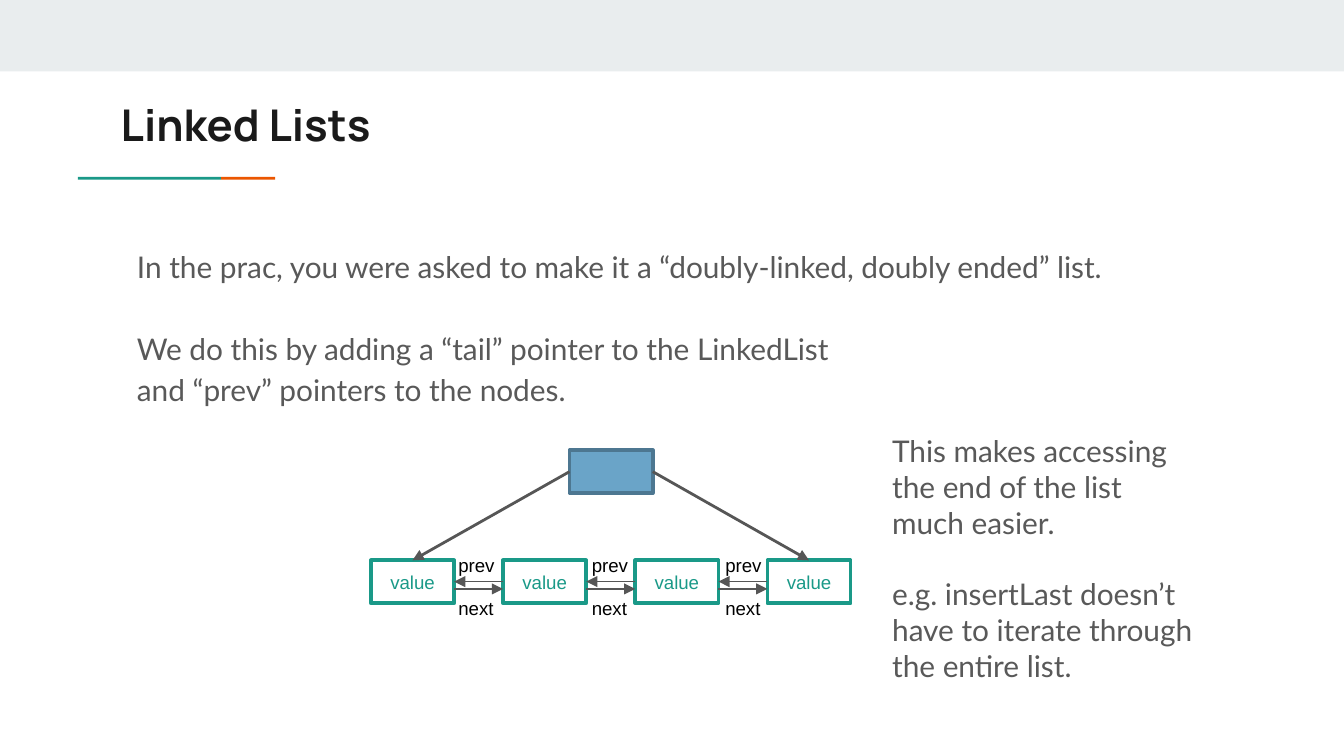
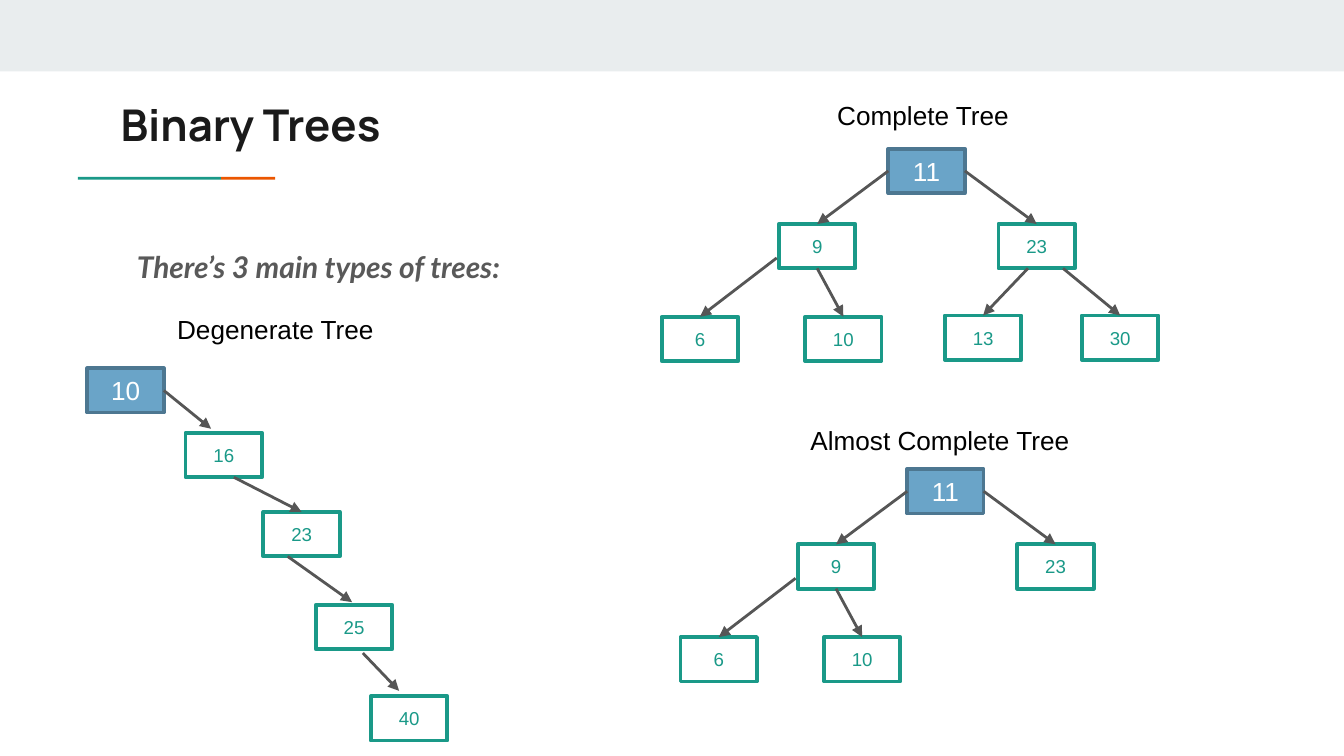
from itertools import pairwise
from typing import NamedTuple, Optional, Union

from pptx import Presentation
from pptx.dml.color import RGBColor
from pptx.enum.shapes import MSO_CONNECTOR, MSO_SHAPE
from pptx.enum.text import MSO_ANCHOR as Anchor, PP_ALIGN as Align
from pptx.oxml.ns import qn
from pptx.shapes.autoshape import Shape
from pptx.shapes.connector import Connector
from pptx.slide import Slide
from pptx.util import Pt
from lxml.etree import SubElement

COLORS = {
    "band": "E9EDEE", "teal": "1A9988", "orange": "EB5600", "title": "1A1A1A",
    "body": "595959", "arrow": "565656", "root": "6AA4C8", "root_edge": "4D7791",
    "white": "FFFFFF", "black": "000000",
}
TOP, LEFT, BOTTOM, RIGHT = range(4)


class Box(NamedTuple):
    left: float
    top: float
    width: float
    height: float


class Style(NamedTuple):
    font: str
    size: float
    color: str
    bold: bool = False
    italic: bool = False


class NodeLook(NamedTuple):
    fill: str
    edge: str
    text: Style


Spot = Union[int, tuple[float, float]]  # a connection site, or an offset from the node's corner


class TreeNode(NamedTuple):
    """A node placed relative to the root, with the arrow that reaches it."""
    label: str
    dx: float = 0
    dy: float = 0
    parent: Optional[int] = None
    start: Spot = BOTTOM
    end: Spot = TOP


class Tree(NamedTuple):
    heading: str
    heading_box: Box
    root_left: float
    root_top: float
    nodes: list[TreeNode]


TITLE = Style("Manrope", 23.4, "title", bold=True)
BODY = Style("Lato", 16, "body")
LEAD = BODY._replace(bold=True, italic=True)
HEADING = Style("Arial", 14, "black")
LABEL = Style("Arial", 10, "black")
ROOT = NodeLook("root", "root_edge", Style("Arial", 14, "white"))
CHILD = NodeLook("white", "teal", Style("Arial", 10, "teal"))

BAND = Box(0, 0, 720, 38.3)
RULES = [("teal", Box(41.8, 94.8, 76.6, 1.5)), ("orange", Box(118.4, 94.8, 29, 1.5))]
BODY_BOX = Box(57.6, 123.1, 605.5, 219)

LIST_LEFT, LIST_TOP, LIST_PITCH, LIST_COUNT = 198.7, 300.2, 70.8, 4
LIST_NODE_W, LIST_NODE_H = 44.6, 23
LABEL_PITCH = 71.5
TREE_NODE_W, TREE_NODE_H = 41, 23.8

ALMOST_COMPLETE = [
    TreeNode("11"),
    TreeNode("9", -58.6, 40.3, 0, LEFT),
    TreeNode("23", 59, 40.3, 0, RIGHT),
    TreeNode("6", -121.4, 90, 1, (-1.2, 18.2)),
    TreeNode("10", -44.6, 90, 1),
]
COMPLETE = ALMOST_COMPLETE + [
    TreeNode("13", 30.3, 89.3, 2, (15.8, 23.8)),
    TreeNode("30", 103.7, 89.3, 2, (34.6, 23.8)),
]
DEGENERATE = [
    TreeNode("10"),
    TreeNode("16", 52.6, 34.6, 0, RIGHT, (13.7, -2.2)),
    TreeNode("23", 94.3, 77, 1, (25.9, 23.8)),
    TreeNode("25", 122.4, 126.7, 2, (13, 23.8), (19.4, -1.4)),
    TreeNode("40", 151.9, 175.7, 3, (25.2, 25.9), (15.1, -2.9)),
]
TREES = [
    Tree("Complete Tree", Box(441.4, 49.7, 108, 24.5), 475.9, 79.7, COMPLETE),
    Tree("Degenerate Tree", Box(87.8, 164.2, 121, 24.5), 46.8, 197.3, DEGENERATE),
    Tree("Almost Complete Tree", Box(427, 223.9, 154.8, 24.5), 486, 251.3, ALMOST_COMPLETE),
]


def rgb(name: str) -> RGBColor:
    return RGBColor.from_string(COLORS[name])


def points(values: tuple[float, ...]) -> list[Pt]:
    return [Pt(value) for value in values]


def set_font(paragraph, style: Style) -> None:
    font = paragraph.font
    font.name, font.size = style.font, Pt(style.size)
    font.bold, font.italic = style.bold, style.italic
    font.color.rgb = rgb(style.color)


def add_text(slide: Slide, text: str, box: Box, style: Style, *, wrap: bool = True,
             inset_x: float = 7.2, inset_y: float = 3.6,
             line_spacing: float = 1, gap: float = 0) -> None:
    """Write one paragraph per line of text, with gap points between paragraphs."""
    frame = slide.shapes.add_textbox(*points(box)).text_frame
    frame.word_wrap = wrap
    frame.margin_left, frame.margin_right = Pt(inset_x), Pt(7.2)
    frame.margin_top = frame.margin_bottom = Pt(inset_y)
    frame.text = text
    for index, paragraph in enumerate(frame.paragraphs):
        set_font(paragraph, style)
        paragraph.line_spacing = line_spacing
        paragraph.space_before = Pt(gap if index else 0)


def add_bar(slide: Slide, box: Box, fill: str) -> Shape:
    bar = slide.shapes.add_shape(MSO_SHAPE.RECTANGLE, *points(box))
    bar.shadow.inherit = False
    bar.fill.solid()
    bar.fill.fore_color.rgb = rgb(fill)
    bar.line.fill.background()
    return bar


def add_node(slide: Slide, box: Box, look: NodeLook, label: str = "") -> Shape:
    node = add_bar(slide, box, look.fill)
    node.line.color.rgb = rgb(look.edge)
    node.line.width = Pt(2)
    if label:
        frame = node.text_frame
        frame.vertical_anchor = Anchor.MIDDLE
        frame.text = label
        frame.paragraphs[0].alignment = Align.CENTER
        set_font(frame.paragraphs[0], look.text)
    return node


def add_arrow(slide: Slide, begin: tuple[int, int], end: tuple[int, int],
              width: float = 1.5) -> Connector:
    arrow = slide.shapes.add_connector(MSO_CONNECTOR.STRAIGHT, *begin, *end)
    arrow.line.color.rgb = rgb("arrow")
    arrow.line.width = Pt(width)
    properties = arrow._element.spPr
    SubElement(properties.get_or_add_ln(), qn("a:tailEnd"), type="triangle")
    SubElement(properties, qn("a:effectLst"))
    return arrow


def locate(node: Shape, spot: Spot) -> tuple[int, int]:
    """Offset spots become slide positions; sites are settled when joined."""
    dx, dy = (0, 0) if isinstance(spot, int) else spot
    return node.left + Pt(dx), node.top + Pt(dy)


def link(slide: Slide, source: Shape, start: Spot, target: Shape, end: Spot) -> None:
    arrow = add_arrow(slide, locate(source, start), locate(target, end))
    if isinstance(start, int):
        arrow.begin_connect(source, start)
    if isinstance(end, int):
        arrow.end_connect(target, end)


def add_titled_slide(deck, title: str, title_width: float) -> Slide:
    slide = deck.slides.add_slide(deck.slide_layouts[6])
    add_bar(slide, BAND, "band")
    for color, box in RULES:
        add_bar(slide, box, color)
    add_text(slide, title, Box(57.6, 45.4, title_width, 42.5), TITLE, inset_y=7.2)
    return slide


def add_body(slide: Slide, text: str, style: Style) -> None:
    add_text(slide, text, BODY_BOX, style, inset_x=15.8, inset_y=7.2,
             line_spacing=1.15, gap=22)


def draw_doubly_linked_list(slide: Slide) -> None:
    ends = add_node(slide, Box(305.1, 241.2, LIST_NODE_W, LIST_NODE_H), ROOT)
    nodes = [
        add_node(slide, Box(LIST_LEFT + i * LIST_PITCH, LIST_TOP, LIST_NODE_W, LIST_NODE_H),
                 CHILD, "value")
        for i in range(LIST_COUNT)
    ]
    link(slide, ends, LEFT, nodes[0], TOP)
    link(slide, ends, RIGHT, nodes[-1], TOP)

    prev_y, next_y = Pt(311.6), Pt(315.5)
    for i, (before, after) in enumerate(pairwise(nodes)):
        gap_left, gap_right = before.left + before.width, after.left
        add_arrow(slide, (gap_left, next_y), (gap_right, next_y), 0.75)
        add_arrow(slide, (gap_right, prev_y), (gap_left, prev_y), 0.75)
        for word, top in (("prev", 293), ("next", 316.4)):
            add_text(slide, word, Box(238.5 + i * LABEL_PITCH, top, 36, 19.4), LABEL, wrap=False)


def draw_tree(slide: Slide, tree: Tree) -> None:
    add_text(slide, tree.heading, tree.heading_box, HEADING, wrap=False)
    shapes: list[Shape] = []
    for node in tree.nodes:
        box = Box(tree.root_left + node.dx, tree.root_top + node.dy, TREE_NODE_W, TREE_NODE_H)
        look = ROOT if node.parent is None else CHILD
        shapes.append(add_node(slide, box, look, node.label))
        if node.parent is not None:
            link(slide, shapes[node.parent], node.start, shapes[-1], node.end)


def main() -> None:
    deck = Presentation()
    deck.slide_width, deck.slide_height = Pt(720), Pt(405)

    linked_lists = add_titled_slide(deck, "Linked Lists", 605.5)
    add_body(linked_lists,
             "In the prac, you were asked to make it a “doubly-linked, doubly ended” list.\n"
             "We do this by adding a “tail” pointer to the LinkedList\v"
             "and “prev” pointers to the nodes.", BODY)
    draw_doubly_linked_list(linked_lists)
    add_text(linked_lists,
             "This makes accessing the end of the list much easier.\n"
             "e.g. insertLast doesn’t have to iterate through the entire list.",
             Box(470.9, 228.2, 177.1, 143.3), BODY, gap=19.2)

    binary_trees = add_titled_slide(deck, "Binary Trees", 165.6)
    add_body(binary_trees, "There’s 3 main types of trees:", LEAD)
    for tree in TREES:
        draw_tree(binary_trees, tree)

    deck.save("out.pptx")


if __name__ == "__main__":
    main()
